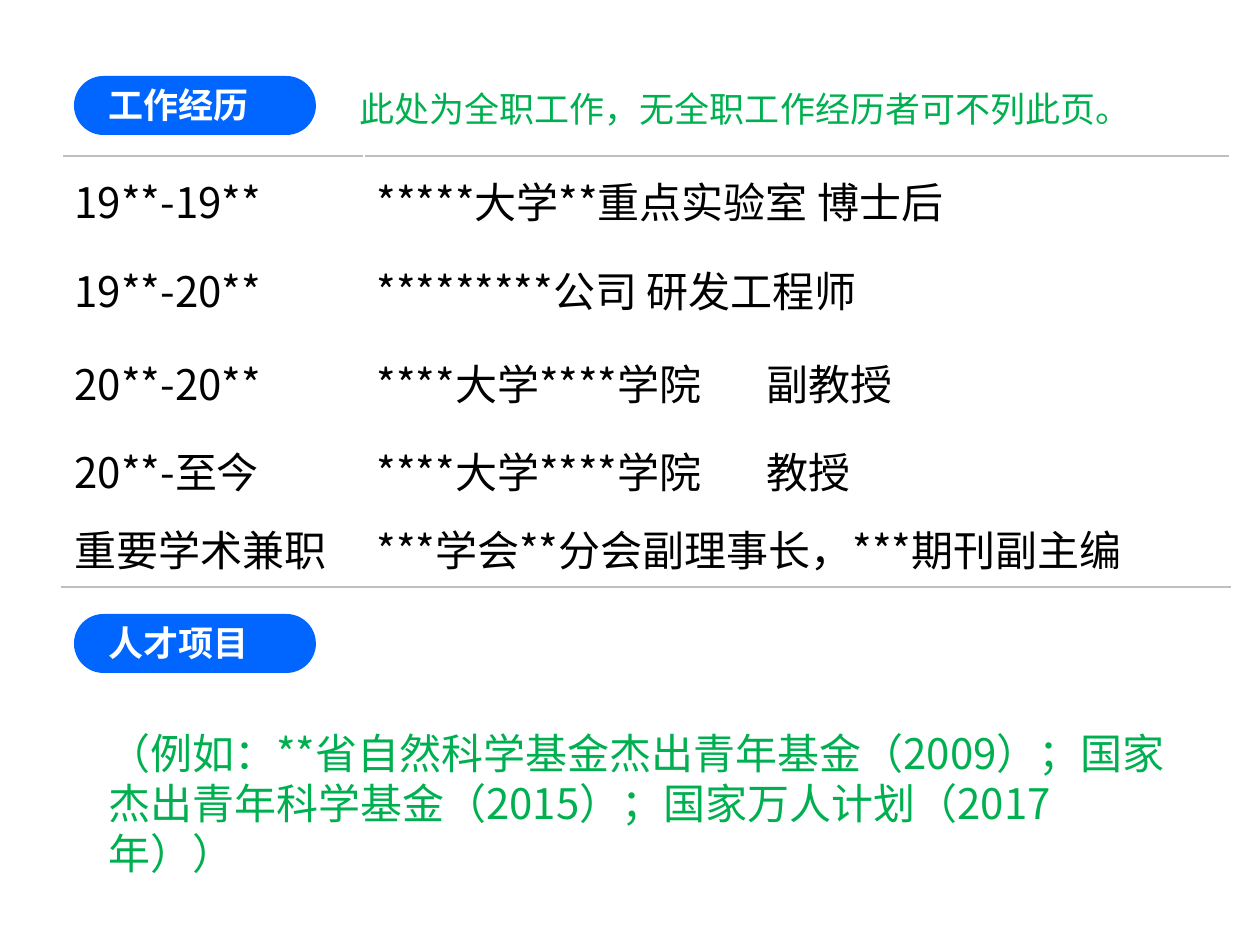
from lxml import etree
from pptx import Presentation
from pptx import util as u
from pptx.dml.color import RGBColor
from pptx.enum import shapes, text
from pptx.oxml.ns import qn

PX_PER_INCH = 126
WHITE = RGBColor(0xFF, 0xFF, 0xFF)
BLACK = RGBColor(0x00, 0x00, 0x00)
BLUE = RGBColor(0x00, 0x66, 0xFF)
GREEN = RGBColor(0x00, 0xB0, 0x50)
GREY = RGBColor(0xBF, 0xBF, 0xBF)
FONT = "Noto Sans CJK SC"

CAREER = [
    ("19**-19**", "*****大学**重点实验室 博士后"),
    ("19**-20**", "*********公司 研发工程师"),
    ("20**-20**", "****大学****学院\t副教授"),
    ("20**-至今", "****大学****学院\t教授"),
    ("重要学术兼职", "***学会**分会副理事长，***期刊副主编"),
]
COL_WIDTHS = [302, 866]
ROW_HEIGHTS = [88, 90, 97, 78, 78]
TITLE_TAB = 390


def px(n):
    return u.Inches(n / PX_PER_INCH)


class ResumeSlide:
    def __init__(self, prs):
        self.slide = prs.slides.add_slide(prs.slide_layouts[6])

    def set_text(self, tf, words, size, color, font=FONT, bold=False):
        p = tf.paragraphs[0]
        p.text = words
        if "\t" in words:
            tabs = etree.SubElement(p._p.get_or_add_pPr(), qn("a:tabLst"))
            etree.SubElement(tabs, qn("a:tab"), pos=str(px(TITLE_TAB)), algn="l")
        p.font.size = u.Pt(size)
        p.font.bold = bold
        p.font.color.rgb = color
        p.font.name = font
        latin = p._p.pPr.find(qn("a:defRPr")).find(qn("a:latin"))
        latin.addnext(etree.Element(qn("a:ea"), typeface=FONT))
        return p

    def badge(self, y, words):
        """Blue pill with a section heading, grouped."""
        group = self.slide.shapes.add_group_shape()
        pill = group.shapes.add_shape(
            shapes.MSO_SHAPE.ROUNDED_RECTANGLE, px(74), px(y), px(242), px(59))
        pill.adjustments[0] = 0.5
        label = group.shapes.add_shape(
            shapes.MSO_SHAPE.RECTANGLE, px(96), px(y + 1), px(166), px(55))
        for sp in (pill, label):
            sp.shadow.inherit = False
            sp.fill.solid()
            sp.fill.fore_color.rgb = BLUE
            sp.line.fill.background()
        tf = label.text_frame
        tf.word_wrap = False
        tf.vertical_anchor = text.MSO_ANCHOR.MIDDLE
        p = self.set_text(tf, words, 20, WHITE, bold=True)
        p.alignment = text.PP_ALIGN.CENTER

    def note(self, x, y, w, h, words, size, font=FONT):
        tf = self.slide.shapes.add_textbox(px(x), px(y), px(w), px(h)).text_frame
        tf.word_wrap = True
        tf.auto_size = text.MSO_AUTO_SIZE.SHAPE_TO_FIT_TEXT
        p = self.set_text(tf, words, size, GREEN, font)
        p.line_spacing = u.Pt(size * 1.2)

    def rule(self, cell, side):
        """Grey border on one side of a cell: lnT or lnB."""
        ln = etree.Element(qn(f"a:{side}"), w=str(u.Pt(1)))
        fill = etree.SubElement(ln, qn("a:solidFill"))
        etree.SubElement(fill, qn("a:srgbClr"), val=str(GREY))
        cell._tc.get_or_add_tcPr().insert(0, ln)

    def table(self, x, y, rows):
        table = self.slide.shapes.add_table(
            len(rows), len(COL_WIDTHS), px(x), px(y),
            px(sum(COL_WIDTHS)), px(sum(ROW_HEIGHTS))).table
        table.first_row = table.horz_banding = False
        for column, width in zip(table.columns, COL_WIDTHS):
            column.width = px(width)
        for i, (row, height) in enumerate(zip(table.rows, ROW_HEIGHTS)):
            row.height = px(height)
            for cell, words in zip(row.cells, rows[i]):
                cell.fill.background()
                cell.vertical_anchor = text.MSO_ANCHOR.MIDDLE
                self.set_text(cell.text_frame, words, 24, BLACK)
                if i == 0:
                    self.rule(cell, "lnT")
                if i == len(rows) - 1:
                    self.rule(cell, "lnB")


def main():
    prs = Presentation()
    prs.slide_width, prs.slide_height = px(1260), px(945)
    s = ResumeSlide(prs)
    s.table(62, 156, CAREER)
    s.badge(76, "工作经历")
    s.badge(614, "人才项目")
    s.note(96, 721, 1082, 115,
           "（例如：**省自然科学基金杰出青年基金（2009）；国家杰出青年科学基金（2015）；"
           "国家万人计划（2017年））", 24)
    s.note(347, 81, 820, 55, "此处为全职工作，无全职工作经历者可不列此页。", 20, "Calibri")
    prs.save("out.pptx")


if __name__ == "__main__":
    main()
